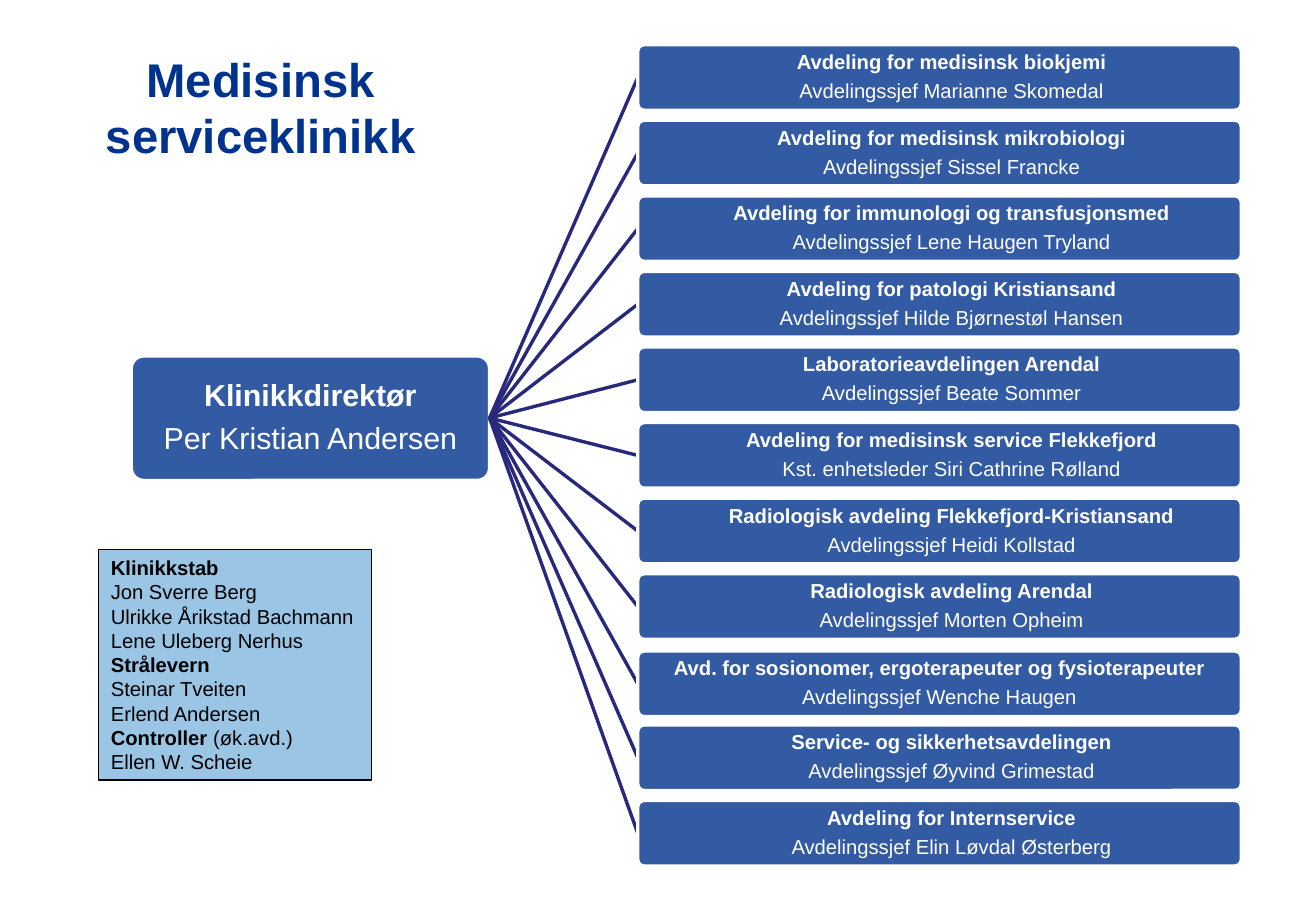
"""Organisation chart of the medical service clinic."""
from dataclasses import dataclass

from lxml.etree import SubElement
from pptx import Presentation
from pptx.dml.color import RGBColor
from pptx.enum.shapes import MSO_CONNECTOR, MSO_SHAPE
from pptx.enum.text import MSO_ANCHOR, MSO_AUTO_SIZE, PP_ALIGN
from pptx.oxml.ns import qn
from pptx.util import Pt


@dataclass(frozen=True)
class Theme:
    font: str = "Arial"
    navy: RGBColor = RGBColor(0x00, 0x33, 0x8D)
    link: RGBColor = RGBColor(0x29, 0x29, 0x7B)
    sky: RGBColor = RGBColor(0x7A, 0xB2, 0xDC)
    white: RGBColor = RGBColor(0xFF, 0xFF, 0xFF)
    black: RGBColor = RGBColor(0x00, 0x00, 0x00)
    title: int = 28
    lead: int = 18
    text: int = 12


T = Theme()


def add_run(p, text, size, color, bold):
    r = p.add_run()
    r.text = text
    r.font.name, r.font.size, r.font.bold = T.font, Pt(size), bold
    r.font.color.rgb = color


def add_panel(kind, box, fill, opacity, line, line_width, insets):
    sp = slide.shapes.add_shape(kind, *map(Pt, box))
    sp.shadow.inherit = False
    sp.fill.solid()
    sp.fill.fore_color.rgb = fill
    clr = sp._element.spPr.find(qn("a:solidFill"))[0]
    SubElement(clr, qn("a:alpha")).set("val", str(opacity * 1000))
    sp.line.color.rgb = line
    sp.line.width = Pt(line_width)
    tf = sp.text_frame
    tf.word_wrap = True
    tf.margin_left = tf.margin_right = Pt(insets[0])
    tf.margin_top = tf.margin_bottom = Pt(insets[1])
    return sp


prs = Presentation()
prs.slide_width, prs.slide_height = Pt(780), Pt(540)
slide = prs.slides.add_slide(prs.slide_layouts[5])

title = slide.shapes.title
title.left, title.top, title.width, title.height = map(Pt, (27, 25.9, 254.9, 124.6))
tf = title.text_frame
tf.word_wrap = True
tf.auto_size = MSO_AUTO_SIZE.NONE
tf.vertical_anchor = MSO_ANCHOR.TOP
p = tf.paragraphs[0]
p.alignment = PP_ALIGN.CENTER
p.line_spacing = 1.0
add_run(p, "Medisinsk serviceklinikk", T.title, T.navy, True)

DEPARTMENTS = [
    ("Avdeling for medisinsk biokjemi", "Avdelingssjef Marianne Skomedal"),
    ("Avdeling for medisinsk mikrobiologi", "Avdelingssjef Sissel Francke"),
    ("Avdeling for immunologi og transfusjonsmed", "Avdelingssjef Lene Haugen Tryland"),
    ("Avdeling for patologi Kristiansand", "Avdelingssjef Hilde Bjørnestøl Hansen"),
    ("Laboratorieavdelingen Arendal", "Avdelingssjef Beate Sommer"),
    ("Avdeling for medisinsk service Flekkefjord", "Kst. enhetsleder Siri Cathrine Rølland"),
    ("Radiologisk avdeling Flekkefjord-Kristiansand", "Avdelingssjef Heidi Kollstad"),
    ("Radiologisk avdeling Arendal", "Avdelingssjef Morten Opheim"),
    ("Avd. for sosionomer, ergoterapeuter og fysioterapeuter", "Avdelingssjef Wenche Haugen"),
    ("Service- og sikkerhetsavdelingen", "Avdelingssjef Øyvind Grimestad"),
    ("Avdeling for Internservice", "Avdelingssjef Elin Løvdal Østerberg"),
]
UNINDENTED_ROW = 8
LEFT, TOP, WIDTH, HEIGHT, STEP = 378, 26.5, 357.8, 38.9, 44.8
HUB_X, HUB_Y = 290.2, 247.8

units = [(("Klinikkdirektør", "Per Kristian Andersen"), (77.8, 211, 212.4, 73.8), T.lead, 0)]
for i, names in enumerate(DEPARTMENTS):
    wide = i == UNINDENTED_ROW
    box = (LEFT, TOP + i * STEP + (1 if wide else 0), WIDTH, HEIGHT)
    units.append((names, box, T.text, 0 if wide else 14.4))

for names, box, size, indent in units:
    if box[0] == LEFT:
        ends = (HUB_X, HUB_Y, LEFT, box[1] + HEIGHT / 2)
        cx = slide.shapes.add_connector(MSO_CONNECTOR.STRAIGHT, *map(Pt, ends))
        cx.line.color.rgb = T.link
        cx.line.width = Pt(2)
        SubElement(cx._element.spPr, qn("a:effectLst"))
    sp = add_panel(MSO_SHAPE.ROUNDED_RECTANGLE, box, T.navy, 80, T.white, 2, (0.7, 0.7))
    sp.adjustments[0] = 0.1
    tf = sp.text_frame
    tf.vertical_anchor = MSO_ANCHOR.MIDDLE
    for row, name in enumerate(names):
        p = tf.add_paragraph() if row else tf.paragraphs[0]
        p.alignment = PP_ALIGN.CENTER
        p.line_spacing = 0.9
        p.space_after = Pt(size * 0.35)
        p._p.get_or_add_pPr().set("marL", str(Pt(indent)))
        add_run(p, name, size, T.white, row == 0)

STAFF = [
    ("Klinikkstab", ""),
    ("", "Jon Sverre Berg"),
    ("", "Ulrikke Årikstad Bachmann"),
    ("", "Lene Uleberg Nerhus"),
    ("Strålevern", ""),
    ("", "Steinar Tveiten"),
    ("", "Erlend Andersen"),
    ("Controller", " (øk.avd.)"),
    ("", "Ellen W. Scheie"),
]
sp = add_panel(MSO_SHAPE.RECTANGLE, (58.6, 325.6, 161.6, 136.8), T.sky, 75, T.black, 0.75, (7.2, 3.6))
tf = sp.text_frame
tf.vertical_anchor = MSO_ANCHOR.TOP
for row, parts in enumerate(STAFF):
    p = tf.add_paragraph() if row else tf.paragraphs[0]
    p.alignment = PP_ALIGN.LEFT
    p.line_spacing = 1.0
    for text, bold in zip(parts, (True, False)):
        if text:
            add_run(p, text, T.text, T.black, bold)

prs.save("out.pptx")
